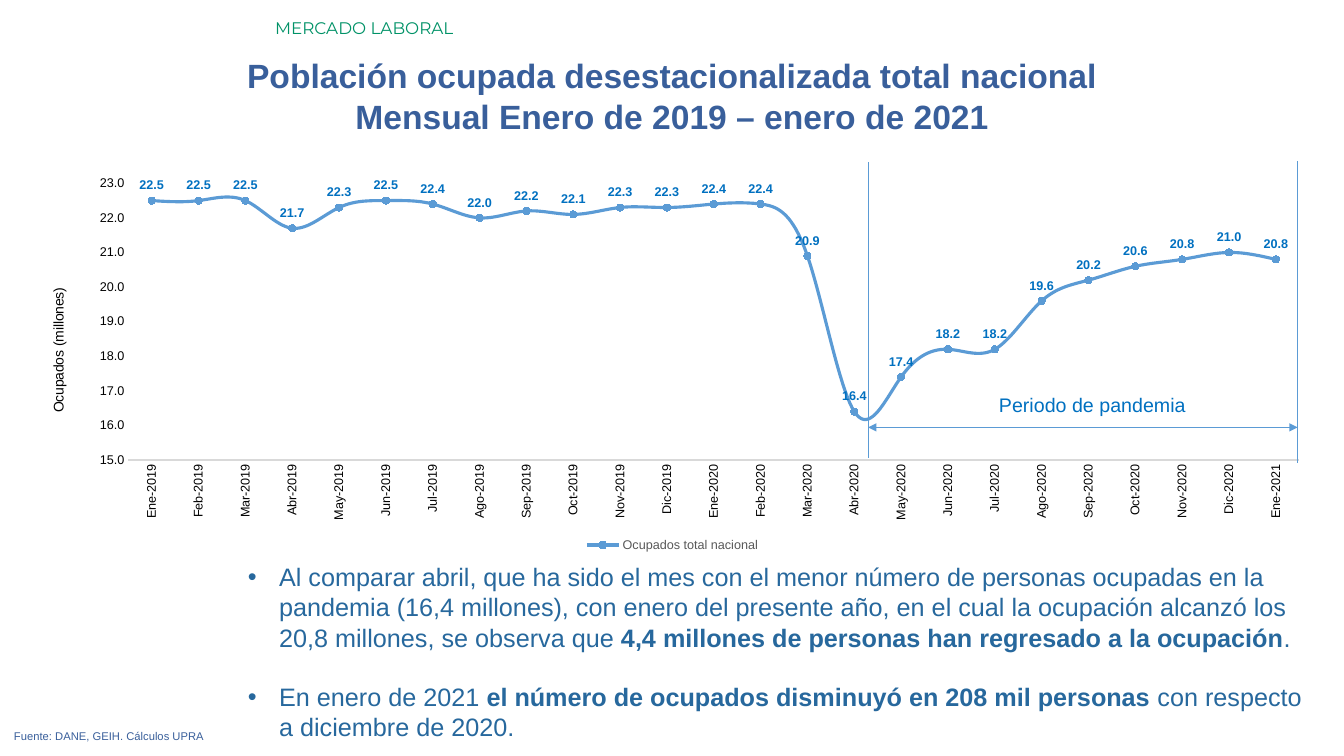
"""Build the slide on the employed population by month, with its line chart."""
from lxml import etree
from pptx import Presentation
from pptx.chart.data import CategoryChartData
from pptx.dml.color import RGBColor
from pptx.enum.chart import (XL_CHART_TYPE, XL_LABEL_POSITION, XL_LEGEND_POSITION,
                             XL_MARKER_STYLE, XL_TICK_MARK)
from pptx.enum.shapes import MSO_CONNECTOR
from pptx.enum.text import PP_ALIGN
from pptx.oxml.ns import qn
from pptx.util import Inches, Pt

KIND = XL_CHART_TYPE.LINE_MARKERS
ABOVE = XL_LABEL_POSITION.ABOVE
BOTTOM = XL_LEGEND_POSITION.BOTTOM
CIRCLE = XL_MARKER_STYLE.CIRCLE
NO_TICK = XL_TICK_MARK.NONE
STRAIGHT = MSO_CONNECTOR.STRAIGHT
LEFT, CENTER, JUSTIFY = PP_ALIGN.LEFT, PP_ALIGN.CENTER, PP_ALIGN.JUSTIFY

GREEN = RGBColor(0x00, 0x92, 0x67)
NAVY = RGBColor(0x39, 0x5F, 0x9B)
STEEL = RGBColor(0x27, 0x68, 0x9D)
BLUE = RGBColor(0x00, 0x70, 0xC0)
SKY = RGBColor(0x5B, 0x9B, 0xD5)
BLACK = RGBColor(0x00, 0x00, 0x00)
GRAY = RGBColor(0x59, 0x59, 0x59)
PALE = RGBColor(0xD9, 0xD9, 0xD9)

deck = Presentation()
deck.slide_width, deck.slide_height = Inches(13.33), Inches(7.5)
slide = deck.slides.add_slide(deck.slide_layouts[6])


def style(font, size, color, bold=False, name="Arial"):
    font.name, font.size, font.bold = name, Pt(size), bold
    font.color.rgb = color


def place(node, index, **spots):
    for old in node.findall(qn("c:layout")):
        node.remove(old)
    layout = etree.Element(qn("c:layout"))
    manual = etree.SubElement(layout, qn("c:manualLayout"))
    for tag, val in spots.items():
        etree.SubElement(manual, qn("c:" + tag)).set("val", str(val))
    node.insert(index, layout)


months = "Ene Feb Mar Abr May Jun Jul Ago Sep Oct Nov Dic".split()
data = CategoryChartData(number_format="0.0")
data.categories = [f"{m}-{y}" for y in (2019, 2020) for m in months] + ["Ene-2021"]
data.add_series("Ocupados total nacional", [
    22.5, 22.5, 22.5, 21.7, 22.3, 22.5, 22.4, 22.0, 22.2, 22.1, 22.3, 22.3,
    22.4, 22.4, 20.9, 16.4, 17.4, 18.2, 18.2, 19.6, 20.2, 20.6, 20.8, 21.0, 20.8])
chart = slide.shapes.add_chart(KIND, Inches(0.26), Inches(1.62), Inches(12.82),
                               Inches(3.9), data).chart
style(chart.font, 10, BLACK)
chart.has_title = False
chart.has_legend = True
chart.legend.position = BOTTOM
chart.legend.include_in_layout = False
style(chart.legend.font, 9, GRAY)
chart.plots[0].vary_by_categories = False

series = chart.plots[0].series[0]
series.smooth = True
series.format.line.color.rgb = SKY
series.format.line.width = Pt(2.25)
series.marker.style, series.marker.size = CIRCLE, 5
series.marker.format.fill.solid()
series.marker.format.fill.fore_color.rgb = SKY
series.marker.format.line.color.rgb = SKY
labels = series.data_labels
labels.show_value = True
labels.position = ABOVE
labels.number_format, labels.number_format_is_linked = "0.0", False
style(labels.font, 9, BLUE, True)

dates, scale = chart.category_axis, chart.value_axis
for axis in (dates, scale):
    axis.has_major_gridlines = False
    axis.major_tick_mark = axis.minor_tick_mark = NO_TICK
    style(axis.tick_labels.font, 9, BLACK)
dates.format.line.color.rgb = PALE
dates.format.line.width = Pt(0.75)
scale.format.line.fill.background()
scale.minimum_scale, scale.maximum_scale, scale.major_unit = 15, 23, 1
scale.tick_labels.number_format = "0.0"
scale.tick_labels.number_format_is_linked = False
run = scale.axis_title.text_frame.paragraphs[0].add_run()
run.text = "Ocupados (millones)"
style(run.font, 10, BLACK)

root = chart.element
turn = root.xpath(".//c:catAx/c:txPr/a:bodyPr")[0]
turn.set("rot", "-5400000")
turn.set("vert", "horz")
place(root.xpath(".//c:plotArea")[0], 0, layoutTarget="inner", xMode="edge",
      yMode="edge", x=0.079, y=0.051, w=0.906, h=0.704)
place(root.xpath(".//c:valAx/c:title")[0], 1, xMode="edge", yMode="edge",
      x=0.016, y=0.31)

START, END, LEVEL = 8.61, 12.87, 4.24
for x1, y1, x2, y2, arrow in [(START, 1.61, START, 4.54, False),
                              (END, 1.6, END, 4.59, False),
                              (START, LEVEL, END, LEVEL, True)]:
    line = slide.shapes.add_connector(STRAIGHT, Inches(x1), Inches(y1),
                                      Inches(x2), Inches(y2))
    line.line.color.rgb = SKY
    line.line.width = Pt(0.5)
    props = line.element.spPr
    etree.SubElement(props, qn("a:effectLst"))
    if arrow:
        for tip in ("a:headEnd", "a:tailEnd"):
            etree.SubElement(props.find(qn("a:ln")), qn(tip)).set("type", "triangle")

texts = [
    (2.63, 0.13, 10.7, 0.3, 12, GREEN, "Montserrat", LEFT, False,
     [[("MERCADO LABORAL", False)]]),
    (0, 0.5, 13.33, 0.91, 24, NAVY, "Arial", CENTER, False,
     [[("Población ocupada desestacionalizada total nacional", True)],
      [("Mensual Enero de 2019 – enero de 2021", True)]]),
    (0.04, 7.19, 12.91, 0.24, 8, NAVY, "Arial", JUSTIFY, False,
     [[("Fuente: DANE, GEIH. Cálculos UPRA", False)]]),
    (9.81, 3.85, 2.63, 0.34, 14, BLUE, "Arial", LEFT, False,
     [[("Periodo de pandemia", False)]]),
    (2.36, 5.52, 10.71, 1.92, 18, STEEL, "Arial", LEFT, True,
     [[("Al comparar abril, que ha sido el mes con el menor número de personas "
        "ocupadas en la pandemia (16,4 millones), con enero del presente año, en "
        "el cual la ocupación alcanzó los 20,8 millones, se observa que ", False),
       ("4,4 millones de personas han regresado a la ocupación", True),
       (".", False)],
      [("En enero de 2021 ", False),
       ("el número de ocupados disminuyó en 208 mil personas ", True),
       ("con respecto a diciembre de 2020.", False)]]),
]
for x, y, w, h, size, color, face, align, bullet, paras in texts:
    frame = slide.shapes.add_textbox(Inches(x), Inches(y), Inches(w),
                                     Inches(h)).text_frame
    frame.word_wrap = True
    for i, runs in enumerate(paras):
        para = frame.add_paragraph() if i else frame.paragraphs[0]
        para.alignment = align
        if bullet:
            if i:
                para.space_before = Pt(21)
            props = para._p.get_or_add_pPr()
            props.set("marL", str(Inches(0.31)))
            props.set("indent", str(Inches(-0.31)))
            etree.SubElement(props, qn("a:buFont")).set("typeface", "Arial")
            etree.SubElement(props, qn("a:buChar")).set("char", "•")
        for words, bold in runs:
            run = para.add_run()
            run.text = words
            style(run.font, size, color, bold, face)

deck.save("out.pptx")
